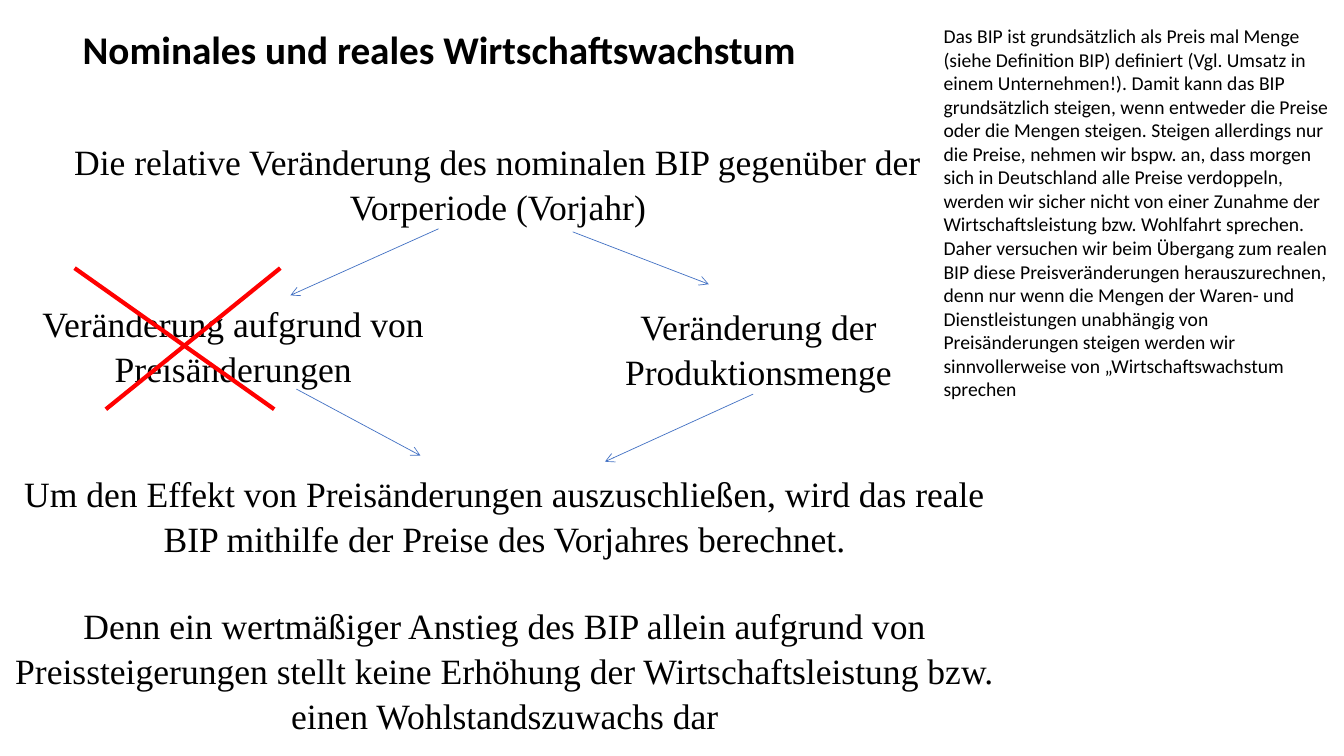
"""Build the slide on nominal and real economic growth."""
from dataclasses import dataclass

from lxml.etree import SubElement
from pptx import Presentation
from pptx.dml.color import RGBColor
from pptx.enum.shapes import MSO_CONNECTOR
from pptx.enum.text import MSO_ANCHOR, PP_ALIGN
from pptx.oxml.ns import qn
from pptx.util import Inches, Pt

BLACK, BLUE, RED = "000000", "4472C4", "FF0000"


@dataclass
class Block:
    box: tuple[float, float, float, float]
    paragraphs: list[str]
    font: str = "Times New Roman"
    size: float = 25.4
    bold: bool = False
    align: PP_ALIGN = PP_ALIGN.CENTER
    anchor: MSO_ANCHOR = MSO_ANCHOR.TOP
    inset: tuple[float, float] = (0.09, 0.05)
    spacing: float = 1.05


@dataclass
class Line:
    start: tuple[float, float]
    end: tuple[float, float]
    color: str = BLUE
    width: float = 0.5
    arrow: bool = True


TITLE = Block((0.11, 0.11, 8.49, 0.81), ["Nominales und reales Wirtschaftswachstum"],
              "Calibri", 28, True, anchor=MSO_ANCHOR.MIDDLE, inset=(0.09, 0.04), spacing=0.9)

BLOCKS = [
    Block((0.02, 1.32, 9.84, 0.95),
          ["Die relative Veränderung des nominalen BIP gegenüber der Vorperiode (Vorjahr)"]),
    Block((0.1, 2.93, 4.43, 0.95), ["Veränderung aufgrund von Preisänderungen"]),
    Block((5.31, 2.96, 4.43, 0.95), ["Veränderung der Produktionsmenge"]),
    Block((0.02, 4.61, 9.98, 2.66), [
        "Um den Effekt von Preisänderungen auszuschließen, wird das reale BIP mithilfe "
        "der Preise des Vorjahres berechnet.",
        "Denn ein wertmäßiger Anstieg des BIP allein aufgrund von Preissteigerungen stellt "
        "keine Erhöhung der Wirtschaftsleistung bzw. einen Wohlstandszuwachs dar"]),
    Block((9.26, 0.19, 4.17, 3.87), [
        "Das BIP ist grundsätzlich als Preis mal Menge (siehe Definition BIP) definiert "
        "(Vgl. Umsatz in einem Unternehmen!). Damit kann das BIP grundsätzlich steigen, "
        "wenn entweder die Preise oder die Mengen steigen. Steigen allerdings nur die "
        "Preise, nehmen wir bspw. an, dass morgen sich in Deutschland alle Preise "
        "verdoppeln, werden wir sicher nicht von einer Zunahme der Wirtschaftsleistung "
        "bzw. Wohlfahrt sprechen. Daher versuchen wir beim Übergang zum realen BIP diese "
        "Preisveränderungen herauszurechnen, denn nur wenn die Mengen der Waren- und "
        "Dienstleistungen unabhängig von Preisänderungen steigen werden wir "
        "sinnvollerweise von „Wirtschaftswachstum sprechen"],
        "Calibri", 14, align=PP_ALIGN.LEFT, inset=(0.1, 0.05), spacing=1.0),
]

ARROWS = [
    Line((4.35, 2.27), (2.88, 2.93)),
    Line((5.68, 2.3), (7.03, 2.82)),
    Line((7.47, 3.91), (6, 4.58)),
    Line((2.94, 3.86), (4.17, 4.52)),
]
CROSS = [
    Line((0.74, 2.66), (2.72, 4.06), RED, 3, False),
    Line((1.05, 4.06), (2.78, 2.66), RED, 3, False),
]


def paint(color_format, color: str) -> None:
    """Set a colour from a hex string."""
    color_format.rgb = RGBColor.from_string(color)


def fill_text(sp, block: Block) -> None:
    """Place a shape and write its formatted paragraphs."""
    sp.left, sp.top, sp.width, sp.height = map(Inches, block.box)
    tf = sp.text_frame
    tf.word_wrap = True
    tf.vertical_anchor = block.anchor
    tf.margin_left = tf.margin_right = Inches(block.inset[0])
    tf.margin_top = tf.margin_bottom = Inches(block.inset[1])
    tf.text = "\n".join(block.paragraphs)
    for i, p in enumerate(tf.paragraphs):
        p.alignment = block.align
        p.line_spacing = block.spacing
        p.space_before = Pt(30.6 if i else 0)
        for r in p.runs:
            r.font.name = block.font
            r.font.size = Pt(block.size)
            r.font.bold = block.bold
            paint(r.font.color, BLACK)


def draw_line(shapes, line: Line) -> None:
    """Draw a straight line, with an open arrowhead if asked."""
    sp = shapes.add_connector(MSO_CONNECTOR.STRAIGHT,
                              *map(Inches, line.start + line.end))
    paint(sp.line.color, line.color)
    sp.line.width = Pt(line.width)
    if line.arrow:
        SubElement(sp.line._get_or_add_ln(), qn("a:tailEnd"), type="arrow")
    SubElement(sp._element.spPr, qn("a:effectLst"))


def main() -> None:
    """Build and save the slide."""
    prs = Presentation()
    prs.slide_width, prs.slide_height = Inches(13.33), Inches(7.5)
    s = prs.slides.add_slide(prs.slide_layouts[5])
    fill_text(s.shapes.title, TITLE)
    *flow, remark = BLOCKS
    for block in flow:
        fill_text(s.shapes.add_textbox(*map(Inches, block.box)), block)
    for arrow in ARROWS:
        draw_line(s.shapes, arrow)
    cross = s.shapes.add_group_shape()
    for stroke in CROSS:
        draw_line(cross.shapes, stroke)
    fill_text(s.shapes.add_textbox(*map(Inches, remark.box)), remark)
    prs.save("out.pptx")


if __name__ == "__main__":
    main()
